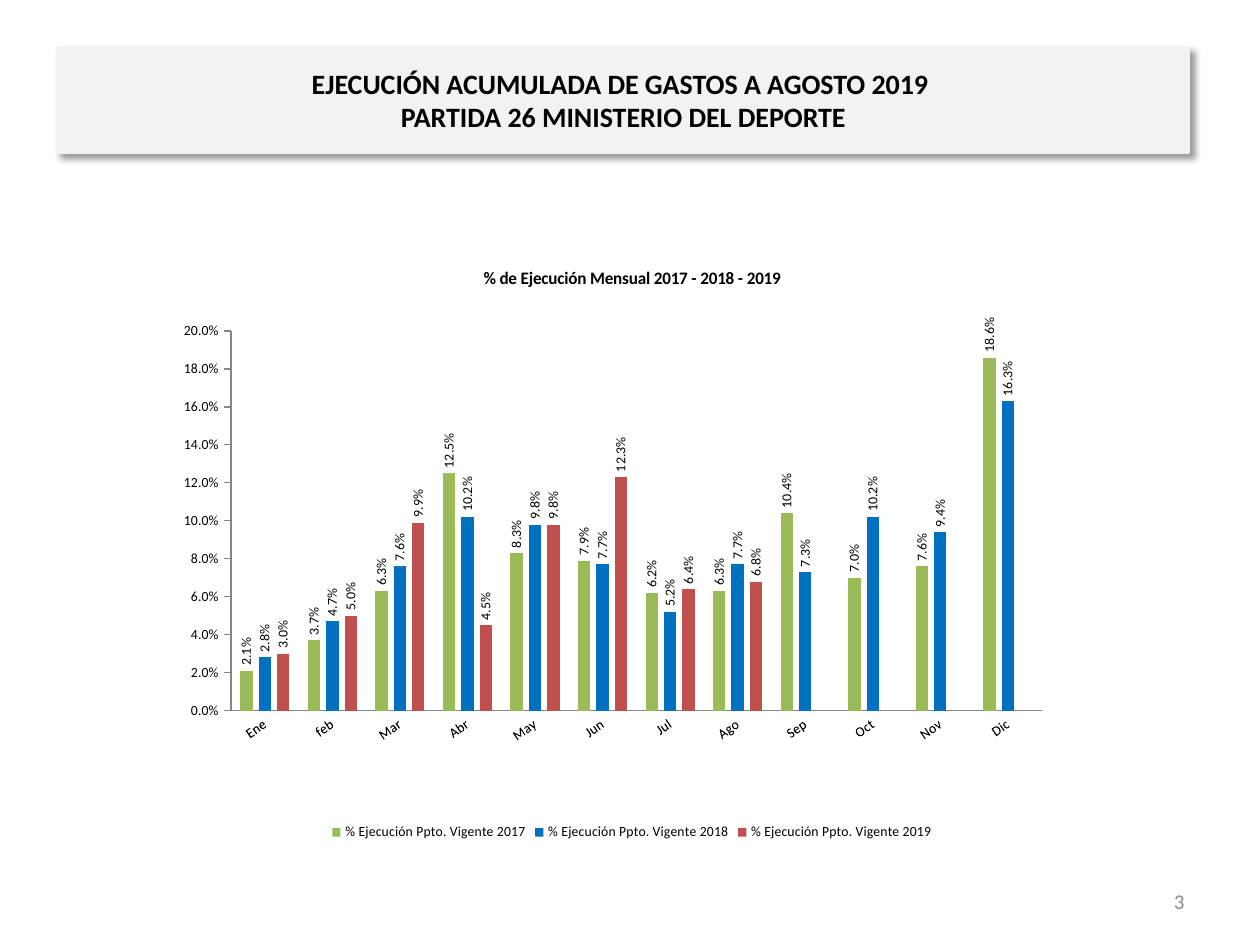
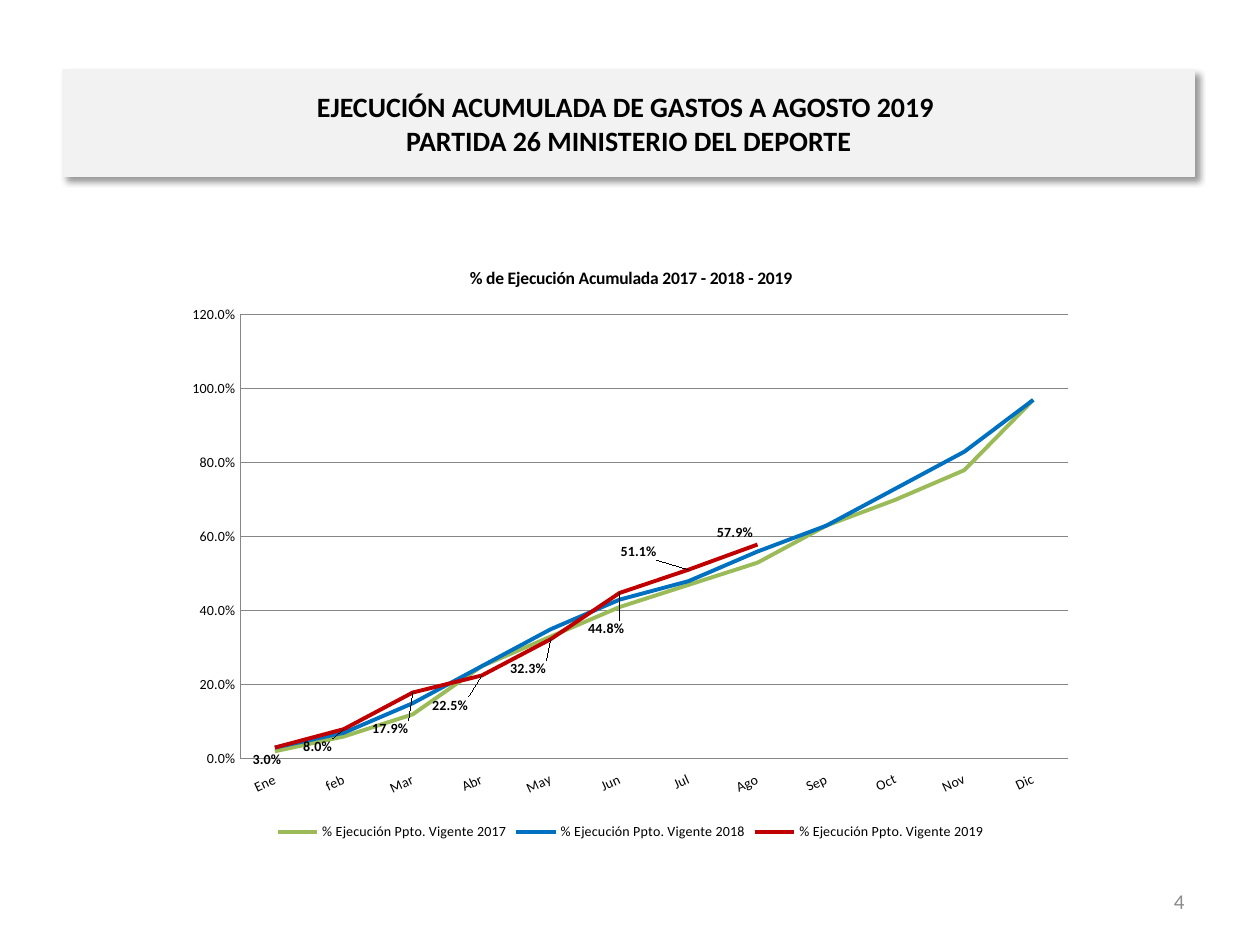
"""Build two slides on the monthly and cumulative budget execution of 2017-2019."""
import lxml.etree
import pptx
import pptx.chart.data
import pptx.dml.color
import pptx.enum.chart
import pptx.enum.shapes
import pptx.enum.text
import pptx.oxml
import pptx.oxml.ns
import pptx.util

Pt = pptx.util.Pt
qn = pptx.oxml.ns.qn
FONT = "Calibri"
COLORS = {"black": "000000", "band": "F2F2F2", "number": "8C8C8C", "axis": "868686",
          "white": "FFFFFF", "green": "9BBB59", "blue": "0070C0", "red": "C0504D",
          "dark red": "C00000"}
TITLE = "EJECUCIÓN ACUMULADA DE GASTOS A AGOSTO 2019 \vPARTIDA 26 MINISTERIO DEL DEPORTE"
MONTHS = ["Ene", "feb", "Mar", "Abr", "May", "Jun", "Jul", "Ago", "Sep", "Oct", "Nov", "Dic"]
YEARS = [2017, 2018, 2019]
PERCENT = "0.0%"
MONTHLY = [
    [0.021, 0.037, 0.063, 0.125, 0.083, 0.079, 0.062, 0.063, 0.104, 0.07, 0.076, 0.186],
    [0.028, 0.047, 0.076, 0.102, 0.098, 0.077, 0.052, 0.077, 0.073, 0.102, 0.094, 0.163],
    [0.03, 0.05, 0.099, 0.045, 0.098, 0.123, 0.064, 0.068],
]
CUMULATIVE = [
    [0.02, 0.06, 0.12, 0.25, 0.33, 0.41, 0.47, 0.53, 0.63, 0.7, 0.78, 0.97],
    [0.03, 0.07, 0.15, 0.25, 0.35, 0.43, 0.48, 0.56, 0.63, 0.73, 0.83, 0.97],
    [0.03, 0.08, 0.179, 0.225, 0.323, 0.448, 0.511, 0.579],
]
LABEL_OFFSETS = [(-0.03, 0.02), (-0.05, 0.03), (-0.05, 0.06), (-0.06, 0.05),
                 (-0.05, 0.05), (-0.04, 0.06), (-0.08, -0.03), (-0.05, -0.02)]


def rgb(name):
    """Return the named colour."""
    return pptx.dml.color.RGBColor.from_string(COLORS[name])


def set_font(font, size, color="black", bold=False):
    """Apply the shared typeface with a size, colour and weight."""
    font.name, font.size, font.bold = FONT, Pt(size), bold
    font.color.rgb = rgb(color)


def set_line(line, color, width=0.75):
    """Give a line a solid colour and a width."""
    line.color.rgb = rgb(color)
    line.width = Pt(width)


def add_title_band(slide, left, top):
    """Add the grey title band with its soft shadow."""
    shape = slide.shapes.add_shape(pptx.enum.shapes.MSO_SHAPE.RECTANGLE,
                                   Pt(left), Pt(top), Pt(646.5), Pt(61))
    shape.fill.solid()
    shape.fill.fore_color.rgb = rgb("band")
    set_line(shape.line, "band")
    shape.shadow.inherit = False
    effects = shape._element.spPr.find(qn("a:effectLst"))
    effects.append(pptx.oxml.parse_xml(
        f'<a:outerShdw {pptx.oxml.ns.nsdecls("a")} blurRad="{Pt(4)}" dist="{Pt(3)}" '
        f'dir="2700000" algn="tl" rotWithShape="0"><a:srgbClr val="{COLORS["black"]}">'
        '<a:alpha val="40000"/></a:srgbClr></a:outerShdw>'))
    frame = shape.text_frame
    frame.word_wrap = True
    frame.vertical_anchor = pptx.enum.text.MSO_ANCHOR.MIDDLE
    frame.text = TITLE
    paragraph = frame.paragraphs[0]
    paragraph.alignment = pptx.enum.text.PP_ALIGN.CENTER
    set_font(paragraph.font, 16, bold=True)


def add_page_number(slide, number):
    """Add the grey page number at the lower right."""
    frame = slide.shapes.add_textbox(Pt(516), Pt(500.5), Pt(168), Pt(28.75)).text_frame
    frame.word_wrap = True
    frame.vertical_anchor = pptx.enum.text.MSO_ANCHOR.MIDDLE
    paragraph = frame.paragraphs[0]
    paragraph.text = str(number)
    paragraph.alignment = pptx.enum.text.PP_ALIGN.RIGHT
    set_font(paragraph.font, 12, "number")


def rotate_text(element, degrees):
    """Turn the text of an axis or of data labels."""
    body = element.find(qn("c:txPr")).find(qn("a:bodyPr"))
    body.set("rot", str(degrees * 60000))
    body.set("vert", "horz")


def manual_layout(inner=False, **fractions):
    """Return a chart layout element from fractions of the chart area."""
    layout = lxml.etree.Element(qn("c:layout"))
    manual = lxml.etree.SubElement(layout, qn("c:manualLayout"))
    settings = {"layoutTarget": "inner", "xMode": "edge", "yMode": "edge"} if inner else {}
    for tag, value in {**settings, **fractions}.items():
        lxml.etree.SubElement(manual, qn("c:" + tag)).set("val", str(value))
    return layout


def set_plot_area(chart, x, y, w, h):
    """Fix the inner plot area and draw the white chart border."""
    space = chart._chartSpace
    area = space.chart.plotArea
    for layout in area.findall(qn("c:layout")):
        area.remove(layout)
    area.insert(0, manual_layout(inner=True, x=x, y=y, w=w, h=h))
    space.chart.addnext(pptx.oxml.parse_xml(
        f'<c:spPr {pptx.oxml.ns.nsdecls("c", "a")}><a:noFill/><a:ln w="{Pt(0.75)}"><a:solidFill>'
        f'<a:srgbClr val="{COLORS["white"]}"/></a:solidFill></a:ln></c:spPr>'))


def add_chart(slide, kind, title, values, left, width, plot_area, maximum, step, angle):
    """Add a titled percentage chart by month and return it."""
    data = pptx.chart.data.CategoryChartData(number_format=PERCENT)
    data.categories = MONTHS
    for year, series_values in zip(YEARS, values):
        missing = [None] * (len(MONTHS) - len(series_values))
        data.add_series(f"% Ejecución Ppto. Vigente {year}", series_values + missing)
    chart = slide.shapes.add_chart(kind, Pt(left), Pt(139.75), Pt(width), Pt(344), data).chart
    set_font(chart.font, 10)
    chart.has_title = True
    chart.chart_title.include_in_layout = False
    chart.chart_title.text_frame.text = title
    set_font(chart.chart_title.text_frame.paragraphs[0].font, 10, bold=True)
    chart.has_legend = True
    chart.legend.position = pptx.enum.chart.XL_LEGEND_POSITION.BOTTOM
    chart.legend.include_in_layout = False
    set_font(chart.legend.font, 8)
    chart.plots[0].vary_by_categories = False
    for axis in (chart.category_axis, chart.value_axis):
        axis.has_major_gridlines = False
        axis.major_tick_mark = pptx.enum.chart.XL_TICK_MARK.NONE
        axis.minor_tick_mark = pptx.enum.chart.XL_TICK_MARK.NONE
        set_font(axis.tick_labels.font, 8)
        set_line(axis.format.line, "axis")
    rotate_text(chart.category_axis._element, angle)
    axis = chart.value_axis
    axis.minimum_scale, axis.maximum_scale, axis.major_unit = 0, maximum, step
    axis.tick_labels.number_format = PERCENT
    axis.tick_labels.number_format_is_linked = False
    set_plot_area(chart, *plot_area)
    return chart


def show_values(series, bold=False):
    """Show the values of a series as percentages and return the labels."""
    labels = series.data_labels
    labels.show_value = True
    labels.number_format = PERCENT
    labels.number_format_is_linked = False
    set_font(labels.font, 8, bold=bold)
    return labels


def add_monthly_chart(slide):
    """Add the clustered columns with upright value labels."""
    chart = add_chart(slide, pptx.enum.chart.XL_CHART_TYPE.COLUMN_CLUSTERED,
                      "% de Ejecución Mensual 2017 - 2018 - 2019", MONTHLY,
                      105, 502, (0.033, 0.143, 0.944, 0.632), 0.2, 0.02, -35)
    chart.value_axis.major_tick_mark = pptx.enum.chart.XL_TICK_MARK.OUTSIDE
    plot = chart.plots[0]
    plot.gap_width, plot.overlap = 150, -49
    for series, color in zip(plot.series, ("green", "blue", "red")):
        series.format.fill.solid()
        series.format.fill.fore_color.rgb = rgb(color)
        labels = show_values(series)
        labels.position = pptx.enum.chart.XL_LABEL_POSITION.OUTSIDE_END
        rotate_text(labels._element, -90)


def add_cumulative_chart(slide):
    """Add the lines, with shifted value labels on the last year."""
    chart = add_chart(slide, pptx.enum.chart.XL_CHART_TYPE.LINE,
                      "% de Ejecución Acumulada 2017 - 2018 - 2019", CUMULATIVE,
                      99.5, 522, (0.072, 0.116, 0.907, 0.739), 1.2, 0.2, -25)
    chart.category_axis.tick_label_position = pptx.enum.chart.XL_TICK_LABEL_POSITION.LOW
    chart.value_axis.has_major_gridlines = True
    set_line(chart.value_axis.major_gridlines.format.line, "axis")
    for series, color in zip(chart.plots[0].series, ("green", "blue", "dark red")):
        series.smooth = False
        set_line(series.format.line, color, 2.25)
    current = chart.plots[0].series[-1]
    labels = show_values(current, bold=True)
    for index in range(len(LABEL_OFFSETS)):
        label = current.points[index].data_label
        set_font(label.font, 8, bold=True)
        label.position = pptx.enum.chart.XL_LABEL_POSITION.RIGHT
    for element, (x, y) in zip(labels._element.findall(qn("c:dLbl")), LABEL_OFFSETS):
        element.insert(1, manual_layout(x=x, y=y))


def main():
    """Build and save the presentation."""
    presentation = pptx.Presentation()
    presentation.slide_width, presentation.slide_height = Pt(720), Pt(540)
    pages = [(3, 33, 26.5, add_monthly_chart), (4, 36, 40, add_cumulative_chart)]
    for number, left, top, add_content in pages:
        slide = presentation.slides.add_slide(presentation.slide_layouts[6])
        add_page_number(slide, number)
        add_title_band(slide, left, top)
        add_content(slide)
    presentation.save("out.pptx")


if __name__ == "__main__":
    main()
